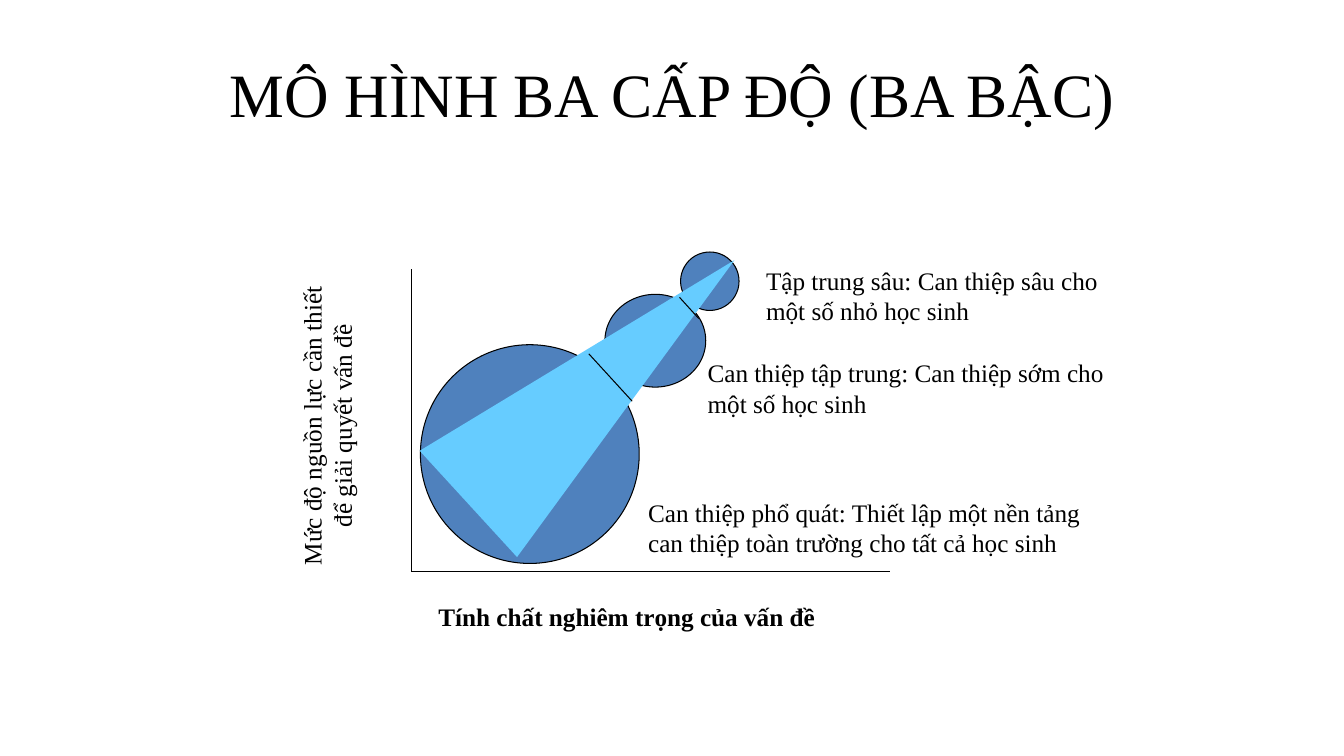
from typing import NamedTuple

from lxml import etree
from pptx import Presentation
from pptx.dml.color import RGBColor
from pptx.enum.shapes import MSO_CONNECTOR, MSO_SHAPE
from pptx.enum.text import MSO_ANCHOR, PP_ALIGN
from pptx.oxml.ns import qn
from pptx.util import Inches, Pt

BLACK = RGBColor(0x00, 0x00, 0x00)
BLUE = RGBColor(0x4F, 0x81, 0xBD)
SKY = RGBColor(0x66, 0xCC, 0xFF)
FONT = "Times New Roman"
LINE_WIDTH = Pt(0.75)
LEFT, CENTER = PP_ALIGN.LEFT, PP_ALIGN.CENTER
MIDDLE = MSO_ANCHOR.MIDDLE
OVAL, TRIANGLE = MSO_SHAPE.OVAL, MSO_SHAPE.ISOSCELES_TRIANGLE
STRAIGHT = MSO_CONNECTOR.STRAIGHT


class Box(NamedTuple):
    left: float
    top: float
    width: float
    height: float


class Segment(NamedTuple):
    x1: float
    y1: float
    x2: float
    y2: float


class Label(NamedTuple):
    box: Box
    lines: tuple[str, ...]
    align: PP_ALIGN = LEFT
    bold: bool = False
    rotation: float = 0


CIRCLES = [
    Box(6.75, 2.5, 0.58, 0.58),
    Box(6, 2.92, 1, 0.92),
    Box(4.17, 3.42, 2.17, 2.17),
]
AXES = [Segment(4.08, 2.67, 4.08, 5.67), Segment(4.08, 5.67, 8.83, 5.67)]
DIVIDERS = [Segment(6.74, 2.95, 6.93, 3.16), Segment(5.84, 3.51, 6.27, 3.98)]
AXIS_LABELS = [
    Label(Box(0.7, 3.87, 5.09, 0.71),
          ("Mức độ nguồn lực cần thiết", "để giải quyết vấn đề"),
          align=CENTER, rotation=270),
    Label(Box(4.25, 5.92, 5.83, 0.4),
          ("Tính chất nghiêm trọng của vấn đề",), bold=True),
]
LEVEL_LABELS = [
    Label(Box(6.33, 4.88, 4.6, 0.71),
          ("Can thiệp phổ quát: Thiết lập một nền tảng "
           "can thiệp toàn trường cho tất cả học sinh",)),
    Label(Box(6.92, 3.5, 4.25, 0.71),
          ("Can thiệp tập trung: Can thiệp sớm cho một số học sinh",)),
    Label(Box(7.5, 2.58, 3.83, 0.71),
          ("Tập trung sâu: Can thiệp sâu cho một số nhỏ học sinh",)),
]


def add_run(p, text: str, size: float, bold: bool = False) -> None:
    r = p.add_run()
    r.text = text
    r.font.name = FONT
    r.font.size = Pt(size)
    r.font.bold = bold
    r.font.color.rgb = BLACK


def add_filled(slide, kind: MSO_SHAPE, box: Box, color: RGBColor):
    sp = slide.shapes.add_shape(kind, *map(Inches, box))
    sp.shadow.inherit = False
    sp.fill.solid()
    sp.fill.fore_color.rgb = color
    return sp


def add_line(slide, segment: Segment) -> None:
    line = slide.shapes.add_connector(STRAIGHT, *map(Inches, segment))
    line.line.color.rgb = BLACK
    line.line.width = LINE_WIDTH
    etree.SubElement(line._element.spPr, qn("a:effectLst"))


def add_label(slide, label: Label) -> None:
    sp = slide.shapes.add_textbox(*map(Inches, label.box))
    sp.rotation = label.rotation
    tf = sp.text_frame
    tf.word_wrap = True
    for i, text in enumerate(label.lines):
        p = tf.add_paragraph() if i else tf.paragraphs[0]
        p.alignment = label.align
        add_run(p, text, 18, label.bold)


def main() -> None:
    prs = Presentation()
    prs.slide_width, prs.slide_height = Inches(13.33), Inches(7.5)
    slide = prs.slides.add_slide(prs.slide_layouts[5])

    # Title
    title = slide.shapes.title
    title.left, title.top, title.width, title.height = map(
        Inches, Box(0.67, 0.3, 12, 1.25))
    tf = title.text_frame
    tf.vertical_anchor = MIDDLE
    p = tf.paragraphs[0]
    p.alignment = CENTER
    add_run(p, "MÔ HÌNH BA CẤP ĐỘ (BA BẬC)", 44)

    # Circles for the three levels
    for box in CIRCLES:
        circle = add_filled(slide, OVAL, box, BLUE)
        circle.line.color.rgb = BLACK
        circle.line.width = LINE_WIDTH

    # Axes
    for axis in AXES:
        add_line(slide, axis)
    for label in AXIS_LABELS:
        add_label(slide, label)

    # Wedge across the circles, split into levels
    wedge = add_filled(slide, TRIANGLE, Box(5.25, 2, 1.43, 3.58), SKY)
    wedge.rotation = 47.5
    wedge.line.fill.background()
    for divider in DIVIDERS:
        add_line(slide, divider)

    # Level descriptions
    for label in LEVEL_LABELS:
        add_label(slide, label)

    prs.save("out.pptx")


if __name__ == "__main__":
    main()
